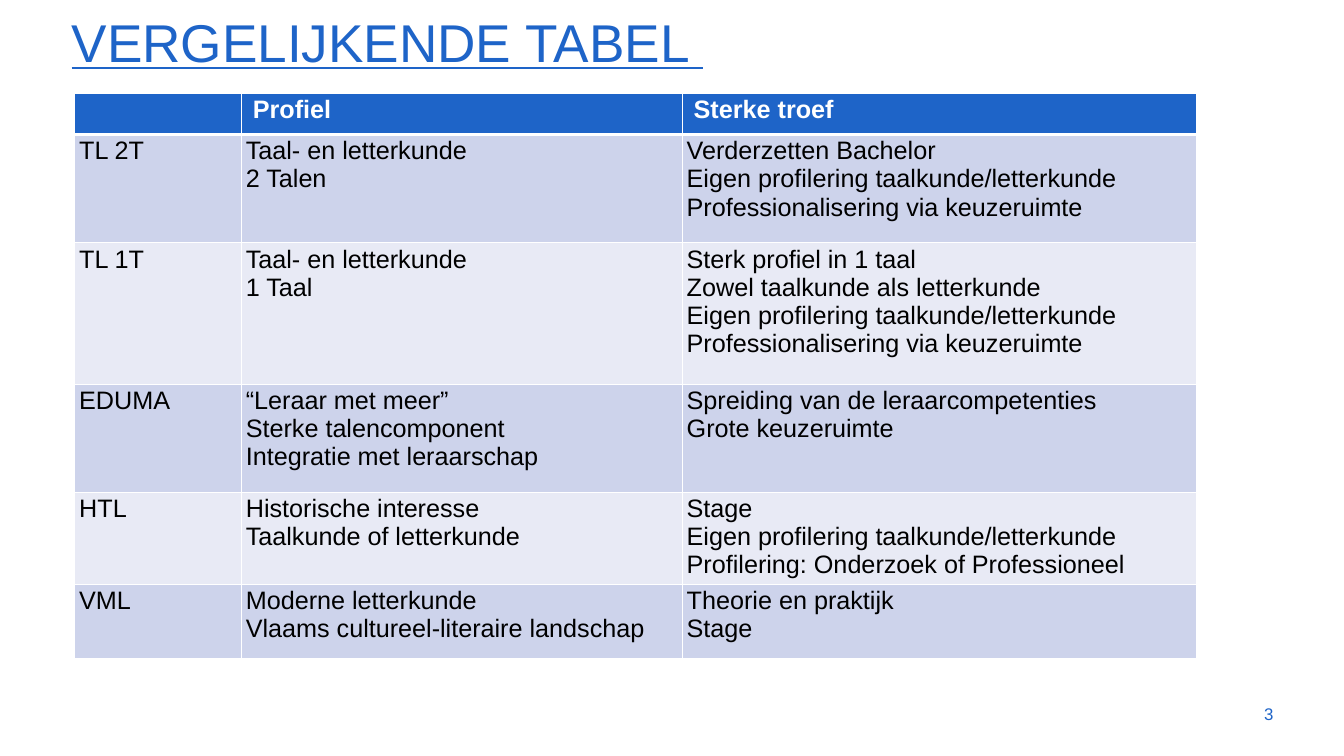
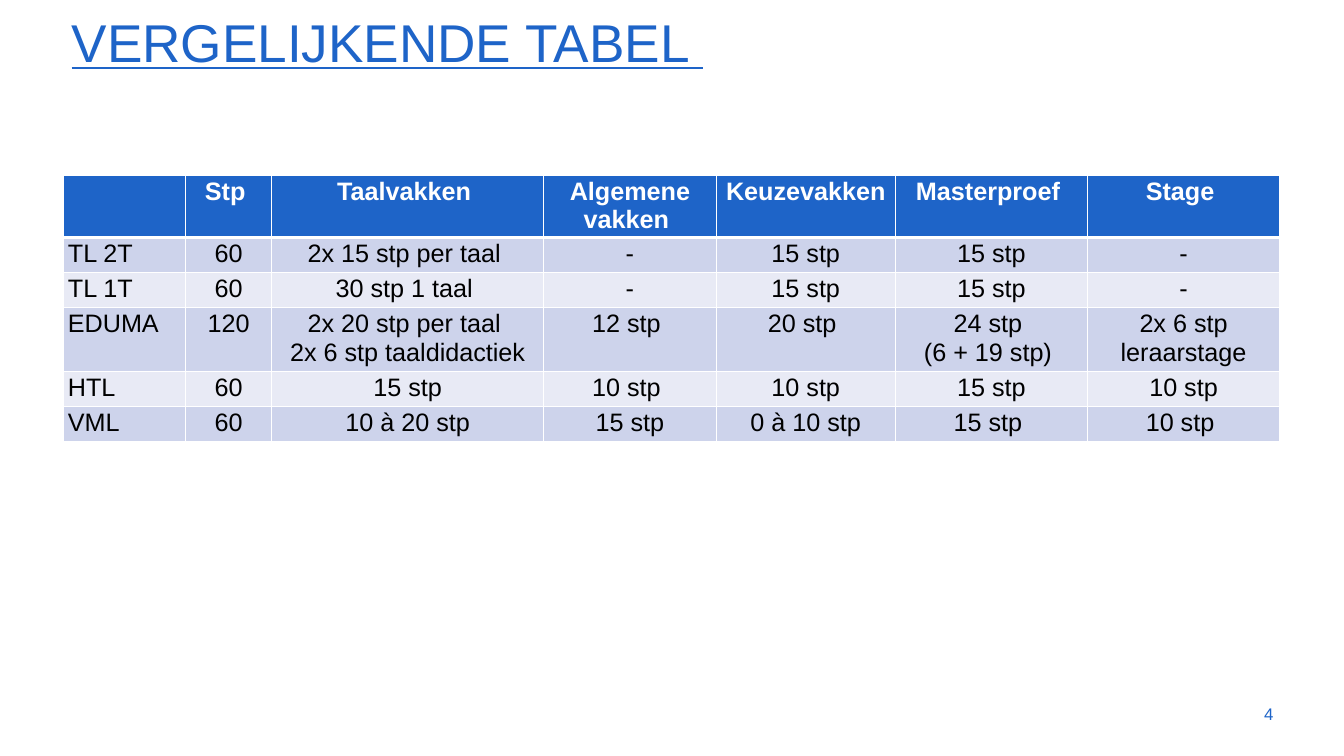
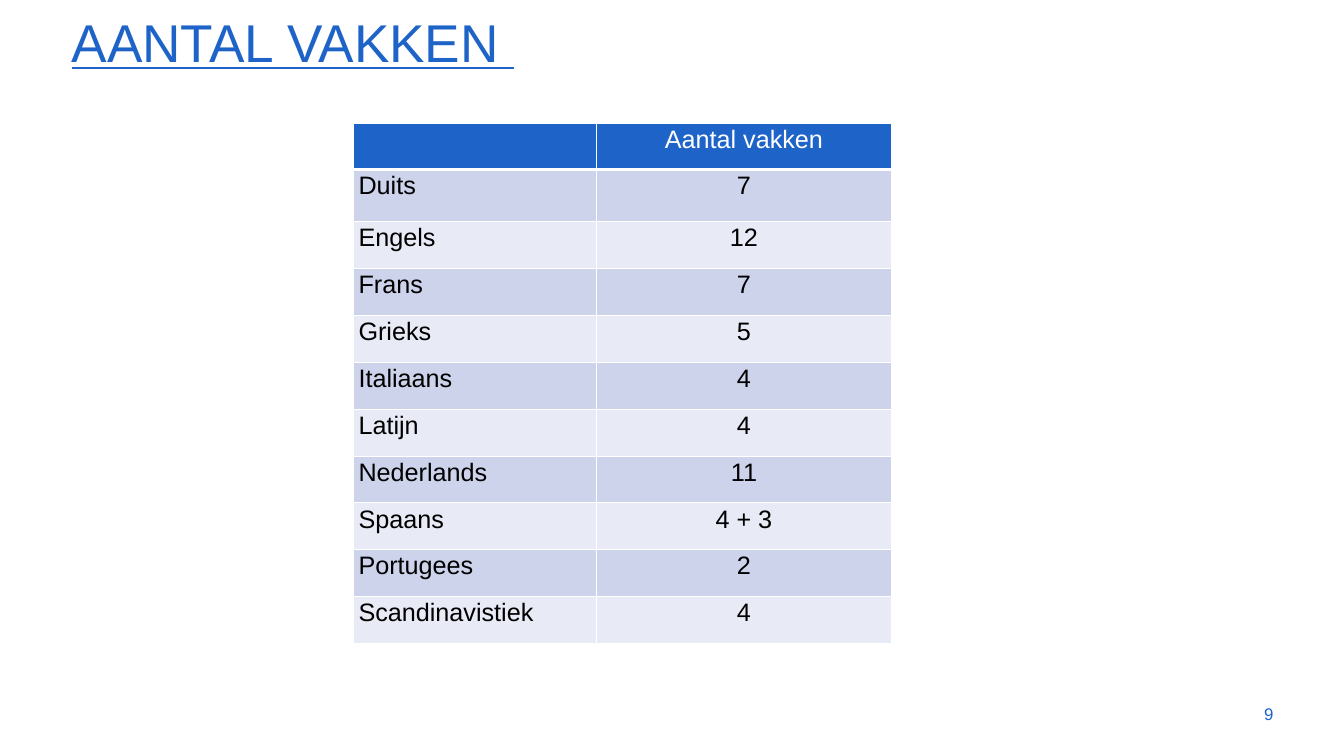
from lxml import etree
from pptx import Presentation
from pptx.dml.color import RGBColor
from pptx.enum.text import MSO_ANCHOR, MSO_AUTO_SIZE, PP_ALIGN
from pptx.oxml.ns import qn
from pptx.util import Pt

LEFT, CENTER, RIGHT = PP_ALIGN.LEFT, PP_ALIGN.CENTER, PP_ALIGN.RIGHT
TOP, MIDDLE, BOTTOM = MSO_ANCHOR.TOP, MSO_ANCHOR.MIDDLE, MSO_ANCHOR.BOTTOM
NO_FIT = MSO_AUTO_SIZE.NONE

BLUE, WHITE, BLACK = "1E64C8", "FFFFFF", "000000"
BANDS = "CDD3EB", "E8EAF5"
FONT = "Arial"


def color(code):
    return RGBColor.from_string(code)


def write(frame, text, size=25.6, ink=BLACK, bold=False, line=False,
          align=LEFT, space=None):
    for index, part in enumerate(text.split("\n")):
        para = frame.add_paragraph() if index else frame.paragraphs[0]
        para.alignment = align
        para.line_spacing = space
        run = para.add_run()
        run.text = part
        font = run.font
        font.name, font.size = FONT, Pt(size)
        font.bold, font.underline = bold, line
        font.color.rgb = color(ink)


def border(cell, tag, width):
    props = cell._tc.get_or_add_tcPr()
    edge = etree.SubElement(props, qn("a:" + tag), w=str(Pt(width)))
    fill = etree.SubElement(edge, qn("a:solidFill"))
    etree.SubElement(fill, qn("a:srgbClr"), val=WHITE)


class Deck:
    def __init__(self):
        self.file = Presentation()
        self.file.slide_width, self.file.slide_height = Pt(1365), Pt(768)
        self.slide = None

    def page(self, title, number):
        self.slide = self.file.slides.add_slide(self.file.slide_layouts[5])
        self.title(title)
        self.number(number)

    def place(self, shape, box, anchor):
        shape.left, shape.top, shape.width, shape.height = map(Pt, box)
        frame = shape.text_frame
        frame.auto_size, frame.word_wrap = NO_FIT, True
        frame.vertical_anchor = anchor
        return frame

    def title(self, text):
        frame = self.place(self.slide.shapes.title,
                           (65.5, 10.8, 1237, 67.7), BOTTOM)
        write(frame, text, size=54, ink=BLUE, line=True, space=0.9)

    def number(self, value):
        box = 1227.6, 704.9, 72.7, 41
        frame = self.place(self.slide.shapes.add_textbox(*map(Pt, box)),
                           box, MIDDLE)
        write(frame, str(value), size=17.1, ink=BLUE, align=RIGHT)

    def table(self, left, top, widths, heights, rows,
              align=CENTER, head=CENTER, bold=True):
        grid = self.slide.shapes.add_table(
            len(rows), len(widths), Pt(left), Pt(top),
            Pt(sum(widths)), Pt(sum(heights))).table
        grid.horz_banding = False
        for column, width in zip(grid.columns, widths):
            column.width = Pt(width)
        for y, (row, height) in enumerate(zip(rows, heights)):
            grid.rows[y].height = Pt(height)
            for x, text in enumerate(row):
                self.cell(grid.cell(y, x), text, y, bold and y == 0,
                          LEFT if x == 0 else align if y else head)

    def cell(self, cell, text, y, bold, align):
        cell.margin_left = cell.margin_right = Pt(4.9)
        cell.margin_top = cell.margin_bottom = Pt(2.45)
        cell.vertical_anchor = TOP
        for tag, width in (("lnL", 1), ("lnR", 1),
                           ("lnT", 3 if y == 1 else 1),
                           ("lnB", 1 if y else 3)):
            border(cell, tag, width)
        cell.fill.solid()
        cell.fill.fore_color.rgb = color(BANDS[(y - 1) % 2] if y else BLUE)
        if text:
            write(cell.text_frame, text, bold=bold, align=align,
                  ink=BLACK if y else WHITE)


def main():
    deck = Deck()

    deck.page("VERGELIJKENDE TABEL ", 3)
    deck.table(75.6, 95, (169.2, 447.8, 522.7),
               (41.8, 110, 143.5, 110, 93, 75.6), (
        ("", " Profiel", " Sterke troef"),
        ("TL 2T", "Taal- en letterkunde\n2 Talen",
         "Verderzetten Bachelor\nEigen profilering taalkunde/letterkunde\n"
         "Professionalisering via keuzeruimte"),
        ("TL 1T", "Taal- en letterkunde\n1 Taal",
         "Sterk profiel in 1 taal\nZowel taalkunde als letterkunde\n"
         "Eigen profilering taalkunde/letterkunde\n"
         "Professionalisering via keuzeruimte"),
        ("EDUMA",
         "“Leraar met meer”\nSterke talencomponent\n"
         "Integratie met leraarschap",
         "Spreiding van de leraarcompetenties\nGrote keuzeruimte"),
        ("HTL", "Historische interesse\nTaalkunde of letterkunde",
         "Stage\nEigen profilering taalkunde/letterkunde\n"
         "Profilering: Onderzoek of Professioneel"),
        ("VML", "Moderne letterkunde\nVlaams cultureel-literaire landschap",
         "Theorie en praktijk\nStage"),
    ), align=LEFT, head=LEFT)

    deck.page("VERGELIJKENDE TABEL ", 4)
    deck.table(64.1, 178, (124.6, 87.1, 276.5, 175, 182.2, 195.1, 195.1),
               (63.5, 35.6, 35.6, 65, 35.6, 35.6), (
        ("", "Stp ", "Taalvakken ", "Algemene vakken ", "Keuzevakken",
         "Masterproef ", "Stage "),
        ("TL 2T", "60", "2x 15 stp per taal ", "-", "15 stp", "15 stp", "-"),
        ("TL 1T", "60", "30 stp 1 taal ", "-", "15 stp", "15 stp", "-"),
        ("EDUMA", "120", "2x 20 stp per taal \n2x 6 stp taaldidactiek",
         "12 stp ", "20 stp ", "24 stp \n(6 + 19 stp) ",
         "2x 6 stp leraarstage"),
        ("HTL", "60", "15 stp", "10 stp ", "10 stp", "15 stp", "10 stp"),
        ("VML", "60", "10 à 20 stp", "15 stp", "0 à 10 stp", "15 stp ",
         "10 stp "),
    ))

    deck.page("AANTAL VAKKEN ", 9)
    deck.table(359.3, 125.3, (246.2, 300.2), (47, 53) + (47.6,) * 9, (
        ("", "Aantal vakken"),
        ("Duits", "7"),
        ("Engels", "12"),
        ("Frans", "7"),
        ("Grieks", "5"),
        ("Italiaans", "4"),
        ("Latijn", "4"),
        ("Nederlands", "11"),
        ("Spaans", "4 + 3"),
        ("Portugees", "2"),
        ("Scandinavistiek", "4"),
    ), bold=False)

    deck.file.save("out.pptx")


if __name__ == "__main__":
    main()
